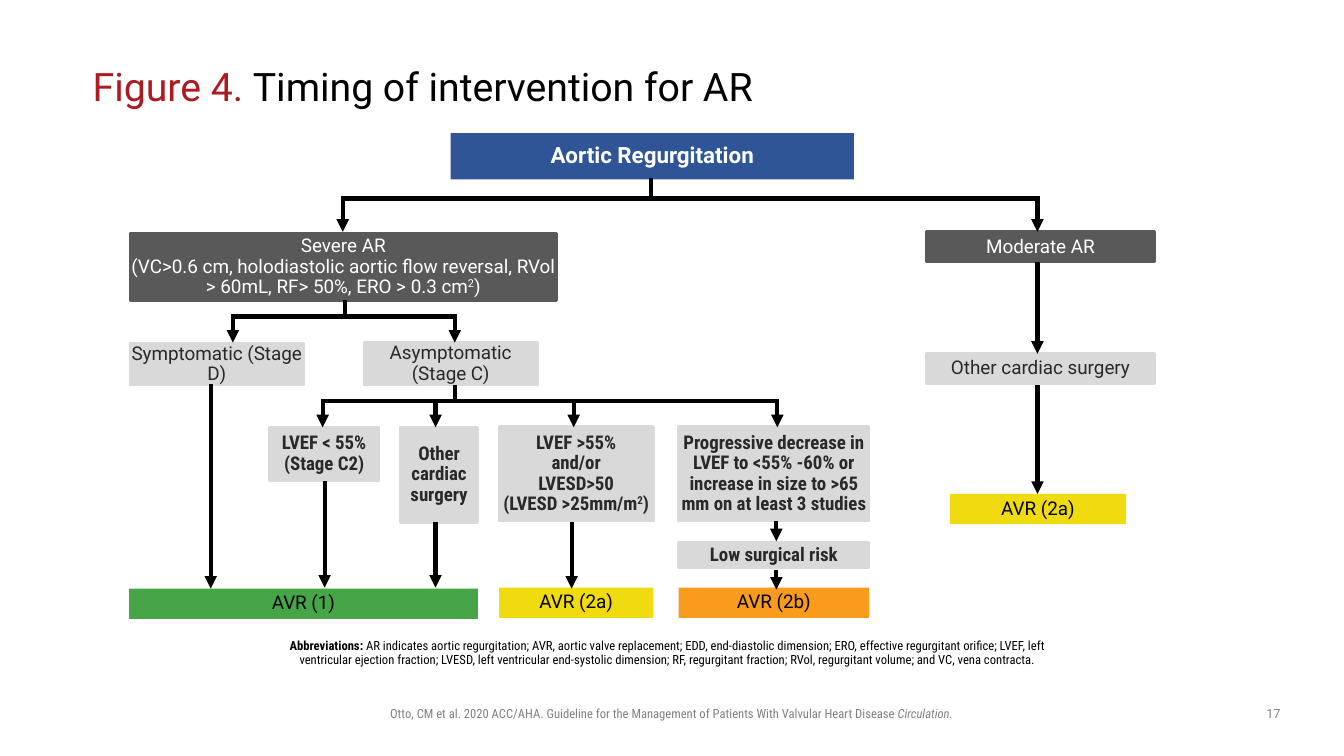
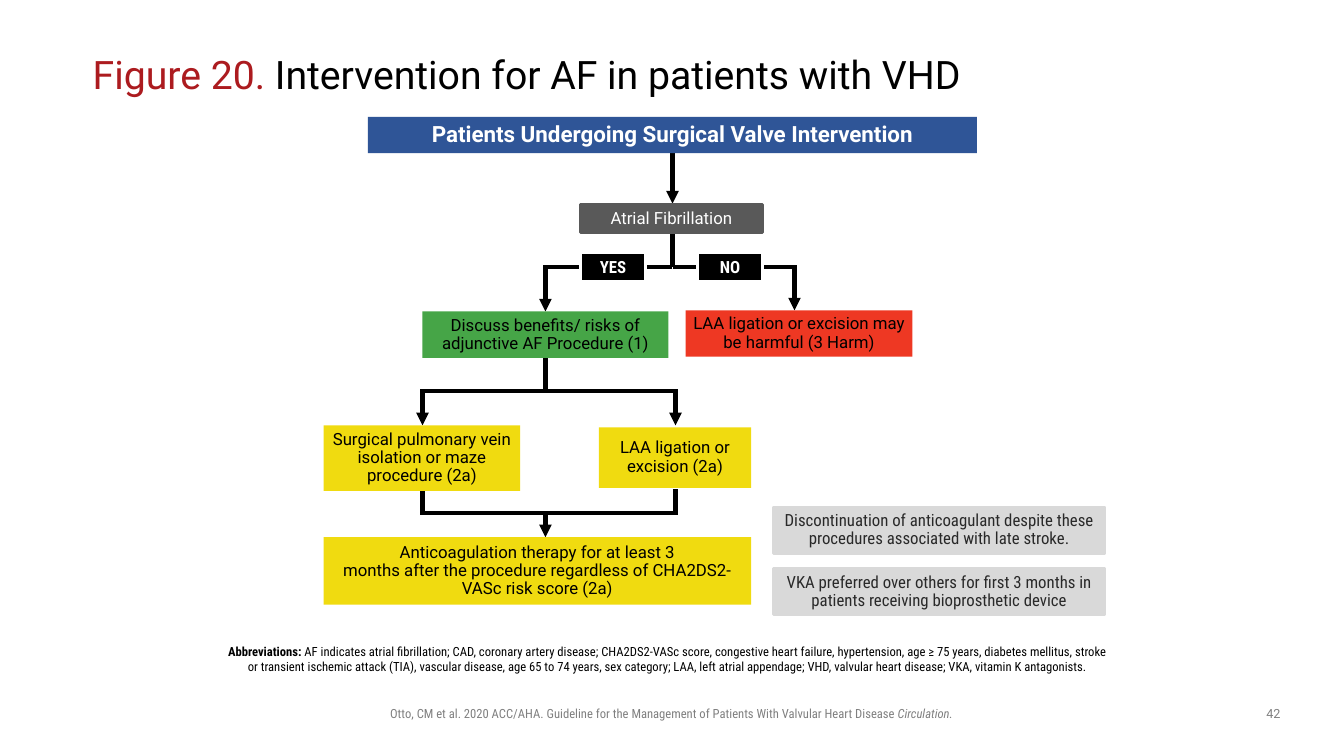
import pptx
import pptx.util
import pptx.dml.color
import pptx.enum.shapes
import pptx.enum.text
import pptx.oxml
import pptx.oxml.ns
from dataclasses import dataclass

Inches, Pt = pptx.util.Inches, pptx.util.Pt


# Theme: colours, fonts and type sizes
@dataclass(frozen=True)
class Theme:
    sans: str = "Roboto"
    condensed: str = "Roboto Condensed"
    black: str = "000000"
    white: str = "FFFFFF"
    ink: str = "292929"
    muted: str = "808080"
    accent: str = "AC1B1F"
    blue: str = "2F5597"
    dark: str = "595959"
    light: str = "D9D9D9"
    green: str = "46A547"
    yellow: str = "F0DB10"
    orange: str = "F99B1D"
    red: str = "EE3823"
    title_size: float = 28
    root_size: float = 16
    small_size: float = 9
    tight: float = 0.9
    arrow_width: float = 3
    outline_width: float = 2


T = Theme()
CENTER = pptx.enum.text.PP_ALIGN.CENTER
SUP = {"sup": True}

# Box kinds: fill, outline and text format
KINDS = {
    "root": dict(fill=T.blue, color=T.white, bold=True, size=T.root_size),
    "dark": dict(fill=T.dark, outline=T.dark, color=T.white),
    "light": dict(fill=T.light, outline=T.light, color=T.ink),
    "criterion": dict(fill=T.light, outline=T.light, color=T.ink,
                      font=T.condensed, bold=True),
    "note": dict(fill=T.light, outline=T.light, color=T.ink,
                 font=T.condensed, insets=(0.1, 0, 0.1, 0)),
    "answer": dict(fill=T.black, outline=T.white, color=T.white,
                   font=T.condensed, bold=True, spacing=1.0),
    "green": dict(fill=T.green),
    "yellow": dict(fill=T.yellow),
    "orange": dict(fill=T.orange),
    "red": dict(fill=T.red),
}


def rgb(value):
    return pptx.dml.color.RGBColor.from_string(value)


# Text: a paragraph is a string or a list of runs; a run is a string
# or a pair of string and format changes
def write(sp, paragraphs, *, size, font=T.sans, color=T.black, bold=False,
          align=CENTER, spacing=T.tight, insets=(0, 0, 0, 0), middle=True):
    tf = sp.text_frame
    tf.word_wrap = True
    anchors = pptx.enum.text.MSO_ANCHOR
    tf.vertical_anchor = anchors.MIDDLE if middle else anchors.TOP
    (tf.margin_left, tf.margin_top,
     tf.margin_right, tf.margin_bottom) = map(Inches, insets)
    if isinstance(paragraphs, str):
        paragraphs = [paragraphs]
    for i, runs in enumerate(paragraphs):
        p = tf.add_paragraph() if i else tf.paragraphs[0]
        p.alignment = align
        p.line_spacing = spacing
        for run in [runs] if isinstance(runs, str) else runs:
            if run == "\n":
                p.add_line_break()
                continue
            text, changes = (run, {}) if isinstance(run, str) else run
            r = p.add_run()
            r.text = text
            r.font.name = font
            r.font.size = Pt(size)
            r.font.bold = changes.get("bold", bold)
            r.font.italic = changes.get("italic", False)
            r.font.color.rgb = rgb(changes.get("color", color))
            if changes.get("sup"):
                r.font._element.set("baseline", "30000")


def label(s, at, paragraphs, **fmt):
    write(s.shapes.add_textbox(*map(Inches, at)), paragraphs, **fmt)


def box(s, kind, at, paragraphs, size):
    fmt = {"size": size, **KINDS[kind]}
    fill, outline = fmt.pop("fill"), fmt.pop("outline", None)
    sp = s.shapes.add_shape(pptx.enum.shapes.MSO_SHAPE.RECTANGLE,
                            *map(Inches, at))
    sp.shadow.inherit = False
    sp.fill.solid()
    sp.fill.fore_color.rgb = rgb(fill)
    if outline:
        sp.line.color.rgb = rgb(outline)
        sp.line.width = Pt(T.outline_width)
    else:
        sp.line.fill.background()
    write(sp, paragraphs, **fmt)


def boxes(s, size, items):
    for kind, at, paragraphs in items:
        box(s, kind, at, paragraphs, size)


# Lines: straight ones are connectors, bent ones are open outlines
def route(s, *points, arrow=True):
    pts = [(Inches(x), Inches(y)) for x, y in points]
    if len(pts) == 2:
        sp = s.shapes.add_connector(
            pptx.enum.shapes.MSO_CONNECTOR.STRAIGHT, *pts[0], *pts[1])
    else:
        builder = s.shapes.build_freeform(*pts[0])
        builder.add_line_segments(pts[1:], close=False)
        sp = builder.convert_to_shape()
        sp.fill.background()
    sp.line.color.rgb = rgb(T.black)
    sp.line.width = Pt(T.arrow_width)
    ln = sp.line._get_or_add_ln()
    add_xml(ln, "a:miter", lim="800000")
    if arrow:
        add_xml(ln, "a:tailEnd", type="triangle")
    add_xml(sp._element.spPr, "a:effectLst")


def add_xml(parent, tag, **attributes):
    element = pptx.oxml.parse_xml(
        f"<{tag} {pptx.oxml.ns.nsdecls('a')}/>")
    for name, value in attributes.items():
        element.set(name, value)
    parent.append(element)


def drop(s, x, top, bottom):
    route(s, (x, top), (x, bottom))


def fork(s, x, top, bar, ends):
    """A stem down to a bar, and an arrow from the bar to each end."""
    route(s, (x, top), (x, bar), arrow=False)
    for end_x, end_y in ends:
        route(s, (x, bar), (end_x, bar), (end_x, end_y))


# Title, abbreviations, citation and page number
def add_slide(prs, figure, title, title_height, page):
    s = prs.slides.add_slide(prs.slide_layouts[6])
    label(s, (0.92, 0.4, 11.5, title_height),
          [[(figure + " ", {"color": T.accent}), title]],
          size=T.title_size, align=pptx.enum.text.PP_ALIGN.LEFT)
    small = dict(size=T.small_size, color=T.muted, spacing=1.0,
                 insets=(0.1, 0.05, 0.1, 0.05), middle=False)
    label(s, (3.17, 6.95, 6.98, 0.25),
          [["Otto, CM et al. 2020 ACC/AHA. Guideline for the Management of "
            "Patients With Valvular Heart Disease ",
            ("Circulation.", {"italic": True})]],
          font=T.condensed, **small)
    label(s, (12.42, 6.95, 0.42, 0.26), str(page), **small)
    return s


def abbreviations(s, at, text, spacing):
    label(s, at, [[("Abbreviations: ", {"bold": True}), text]],
          size=T.small_size, font=T.condensed, spacing=spacing,
          insets=(0, 0.05, 0.1, 0.05), middle=False)


def regurgitation_slide(prs):
    s = add_slide(prs, "Figure 4.", "Timing of intervention for AR", 0.97, 17)
    abbreviations(
        s, (2.79, 6.3, 7.75, 0.3),
        "AR indicates aortic regurgitation; AVR, aortic valve replacement; "
        "EDD, end-diastolic dimension; ERO, effective regurgitant orifice; "
        "LVEF, left ventricular ejection fraction; LVESD, left ventricular "
        "end-systolic dimension; RF, regurgitant fraction; RVol, regurgitant "
        "volume; and VC, vena contracta.", T.tight)
    # Decision tree
    boxes(s, 13.5, [
        ("root", (4.47, 1.32, 4, 0.46), "Aortic Regurgitation"),
        ("dark", (1.29, 2.32, 4.23, 0.66),
         ["Severe AR",
          ["(VC>0.6 cm, holodiastolic aortic flow reversal, RVol > 60mL, "
           "RF> 50%, ERO > 0.3 cm", ("2", SUP), ")"]]),
        ("dark", (9.19, 2.3, 2.26, 0.3), "Moderate AR"),
        ("light", (1.29, 3.41, 1.72, 0.41), "Symptomatic (Stage D)"),
        ("light", (3.61, 3.4, 1.72, 0.42), "Asymptomatic (Stage C)"),
        ("light", (9.19, 3.51, 2.26, 0.3), "Other cardiac surgery"),
        ("criterion", (2.67, 4.24, 1.09, 0.53), ["LVEF < 55%", "(Stage C2)"]),
        ("criterion", (3.97, 4.24, 0.77, 0.94), "Other cardiac surgery"),
        ("criterion", (4.95, 4.23, 1.53, 0.94),
         ["LVEF >55%", "and/or", "LVESD>50",
          ["(LVESD >25mm/m", ("2", SUP), ")"]]),
        ("criterion", (6.73, 4.23, 1.89, 0.94),
         "Progressive decrease in LVEF to <55% -60% or increase in size "
         "to >65 mm on at least 3 studies"),
        ("criterion", (6.73, 5.38, 1.89, 0.25), "Low surgical risk"),
        ("green", (1.28, 5.84, 3.46, 0.3), "AVR (1)"),
        ("yellow", (4.95, 5.83, 1.53, 0.3), "AVR (2a)"),
        ("orange", (6.73, 5.83, 1.89, 0.3), "AVR (2b)"),
        ("yellow", (9.42, 4.9, 1.75, 0.3), "AVR (2a)"),
    ])
    # Branches and arrows
    fork(s, 6.46, 1.77, 1.97, [(3.4, 2.3), (10.29, 2.3)])
    fork(s, 3.42, 2.98, 3.14, [(2.31, 3.4), (4.51, 3.4)])
    fork(s, 4.51, 3.82, 3.98,
         [(x, 4.24) for x in (3.2, 4.32, 5.69, 7.71)])
    for x, top, bottom in [(2.09, 3.81, 5.84), (3.22, 4.77, 5.83),
                           (4.32, 5.18, 5.83), (5.67, 5.18, 5.84),
                           (7.7, 5.17, 5.37), (7.7, 5.65, 5.85),
                           (10.29, 2.6, 3.51), (10.29, 3.82, 4.9)]:
        drop(s, x, top, bottom)


def fibrillation_slide(prs):
    s = add_slide(prs, "Figure 20.",
                  "Intervention for AF in patients with VHD", 0.72, 42)
    abbreviations(
        s, (2.26, 6.34, 8.81, 0.3),
        "AF indicates atrial fibrillation; CAD, coronary artery disease; "
        "CHA2DS2-VASc score, congestive heart failure, hypertension, "
        "age ≥ 75 years, diabetes mellitus, stroke or transient ischemic "
        "attack (TIA), vascular disease, age 65 to 74 years, sex category; "
        "LAA, left atrial appendage; VHD, valvular heart disease; "
        "VKA, vitamin K antagonists.", 1.0)
    # Branches and arrows
    drop(s, 6.67, 1.52, 2.02)
    fork(s, 6.67, 2.31, 2.65, [(5.41, 3.09), (7.88, 3.08)])
    fork(s, 5.41, 3.54, 3.88, [(4.19, 4.22), (6.7, 4.22)])
    route(s, (4.19, 4.85), (4.19, 5.09), (6.7, 5.09), (6.7, 4.85),
          arrow=False)
    drop(s, 5.41, 5.09, 5.33)
    # Decision tree
    boxes(s, 12, [
        ("root", (3.65, 1.16, 6.04, 0.36),
         "Patients Undergoing Surgical Valve Intervention"),
        ("dark", (5.76, 2.03, 1.8, 0.28), "Atrial Fibrillation"),
        ("answer", (5.76, 2.51, 0.64, 0.28), "YES"),
        ("answer", (6.92, 2.51, 0.64, 0.28), "NO"),
        ("green", (4.19, 3.09, 2.44, 0.46),
         "Discuss benefits/ risks of adjunctive AF Procedure (1)"),
        ("red", (6.8, 3.08, 2.25, 0.46),
         "LAA ligation or excision may be harmful (3 Harm)"),
        ("yellow", (3.21, 4.22, 1.95, 0.65),
         "Surgical pulmonary vein isolation or maze procedure (2a)"),
        ("yellow", (5.94, 4.24, 1.51, 0.6), "LAA ligation or excision (2a)"),
        ("yellow", (3.21, 5.33, 4.24, 0.67),
         [["Anticoagulation therapy for at least 3", "\n",
           "months after the procedure regardless of CHA2DS2-VASc "
           "risk score (2a)"]]),
        ("note", (7.67, 5.03, 3.29, 0.46),
         "Discontinuation of anticoagulant despite these procedures "
         "associated with late stroke."),
        ("note", (7.67, 5.64, 3.29, 0.46),
         "VKA preferred over others for first 3 months in patients "
         "receiving bioprosthetic device"),
    ])


def main():
    prs = pptx.Presentation()
    prs.slide_width, prs.slide_height = Inches(13.33), Inches(7.5)
    regurgitation_slide(prs)
    fibrillation_slide(prs)
    prs.save("out.pptx")


if __name__ == "__main__":
    main()
